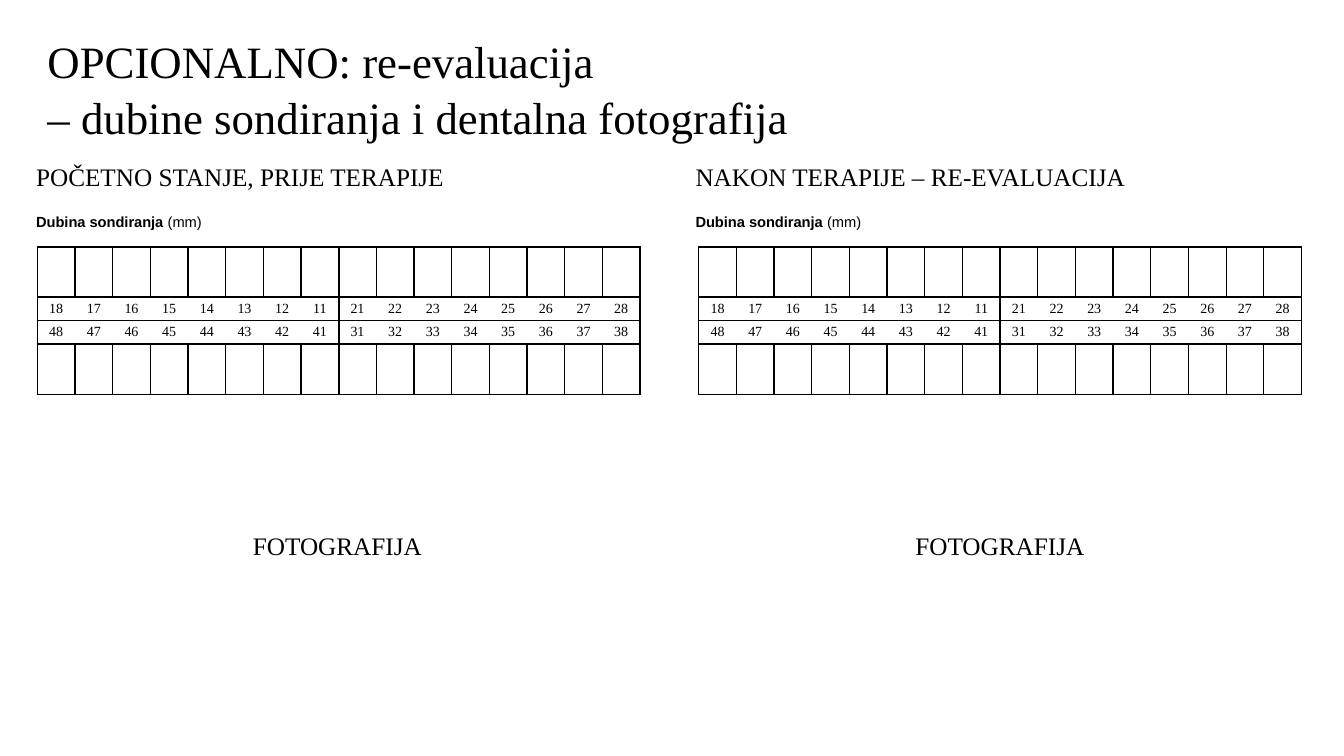
"""Build a slide comparing probing depths before therapy and at re-evaluation."""
from dataclasses import dataclass

import lxml.etree
import pptx
import pptx.dml.color
import pptx.enum.text
import pptx.oxml.ns
import pptx.slide
import pptx.table
import pptx.text.text
import pptx.util

PX = 9144


@dataclass(frozen=True)
class Theme:
    """Colours, fonts, type sizes and line widths."""

    ink: str = "000000"
    serif: str = "Times New Roman"
    sans: str = "Arial"
    title: float = 32
    heading: float = 18
    depth: float = 10.5
    tooth: float = 10
    thin: float = 1
    thick: float = 1.5


@dataclass(frozen=True)
class Caption:
    """A piece of text, optionally led by a bold part, and its place in px."""

    text: str
    left: int
    top: int
    width: int
    height: int
    size: float
    font: str
    bold_lead: str = ""
    wrap: bool = False


@dataclass(frozen=True)
class Stage:
    """One examination: heading, probing chart and photo area."""

    heading: str
    heading_width: int
    text_left: int
    chart_left: int
    photo_left: int


THEME = Theme()
STAGES = (
    Stage("POČETNO STANJE, PRIJE TERAPIJE", 429, 26, 37, 241),
    Stage("NAKON TERAPIJE – RE-EVALUACIJA", 451, 680, 693, 898),
)
UPPER_TEETH = (*range(18, 10, -1), *range(21, 29))
LOWER_TEETH = (*range(48, 40, -1), *range(31, 39))
CHART_ROWS = ((), UPPER_TEETH, LOWER_TEETH, ())
ROW_HEIGHTS = (50, 23, 23, 50)
ROW_EDGES = (THEME.thin, THEME.thick, THEME.thin, THEME.thick, THEME.thin)
CHART_TOP, CHART_WIDTH = 245, 598
TEETH = len(UPPER_TEETH)


def px(length: int) -> pptx.util.Emu:
    """Turn px into EMU."""
    return pptx.util.Emu(length * PX)


def style_run(run: pptx.text.text._Run, size: float, font: str, bold: bool = False) -> None:
    """Give a run its typeface, size, weight and colour."""
    run.font.name = font
    run.font.size = pptx.util.Pt(size)
    run.font.bold = bold
    run.font.color.rgb = pptx.dml.color.RGBColor.from_string(THEME.ink)


def add_caption(slide: pptx.slide.Slide, caption: Caption) -> None:
    """Place a caption as a text box."""
    box = slide.shapes.add_textbox(
        px(caption.left), px(caption.top), px(caption.width), px(caption.height)
    )
    frame = box.text_frame
    frame.word_wrap = caption.wrap
    fit = pptx.enum.text.MSO_AUTO_SIZE
    frame.auto_size = fit.NONE if caption.wrap else fit.SHAPE_TO_FIT_TEXT
    for wording, bold in ((caption.bold_lead, True), (caption.text, False)):
        if wording:
            run = frame.paragraphs[0].add_run()
            run.text = wording
            style_run(run, caption.size, caption.font, bold)


def set_border(cell: pptx.table._Cell, side: str, width: float) -> None:
    """Draw one side of a cell, or clear it when the width is zero."""
    qn = pptx.oxml.ns.qn
    properties = cell._tc.get_or_add_tcPr()
    border = lxml.etree.SubElement(properties, qn(f"a:ln{side}"), w=str(pptx.util.Pt(width)))
    if width:
        paint = lxml.etree.SubElement(border, qn("a:solidFill"))
        lxml.etree.SubElement(paint, qn("a:srgbClr"), val=THEME.ink)
    else:
        lxml.etree.SubElement(border, qn("a:noFill"))


def column_edge(edge: int, numbered: bool) -> float:
    """Give the width of a vertical line; numbered rows keep only midline and ends."""
    if edge == TEETH // 2:
        return THEME.thick
    return 0 if numbered and 0 < edge < TEETH else THEME.thin


def add_probing_chart(slide: pptx.slide.Slide, left: int) -> None:
    """Draw the dental chart with empty depth cells around the tooth numbers."""
    chart = slide.shapes.add_table(
        len(CHART_ROWS), TEETH, px(left), px(CHART_TOP), px(CHART_WIDTH), px(sum(ROW_HEIGHTS))
    ).table
    chart.first_row = chart.horz_banding = False
    for column in chart.columns:
        column.width = px(CHART_WIDTH) // TEETH
    for row, teeth in enumerate(CHART_ROWS):
        chart.rows[row].height = px(ROW_HEIGHTS[row])
        for column in range(TEETH):
            cell = chart.cell(row, column)
            set_border(cell, "L", column_edge(column, bool(teeth)))
            set_border(cell, "R", column_edge(column + 1, bool(teeth)))
            set_border(cell, "T", ROW_EDGES[row])
            set_border(cell, "B", ROW_EDGES[row + 1])
            cell.fill.background()
            if teeth:
                cell.margin_left = cell.margin_right = px(7)
                cell.margin_top = cell.margin_bottom = 0
                cell.vertical_anchor = pptx.enum.text.MSO_ANCHOR.MIDDLE
                number = cell.text_frame.paragraphs[0]
                number.text = str(teeth[column])
                number.alignment = pptx.enum.text.PP_ALIGN.CENTER
                style_run(number.runs[0], THEME.tooth, THEME.serif)


def set_title(slide: pptx.slide.Slide) -> None:
    """Fill and format the title placeholder."""
    title = slide.shapes.title
    title.left, title.top, title.width, title.height = px(37), px(24), px(1200), px(125)
    frame = title.text_frame
    frame.auto_size = pptx.enum.text.MSO_AUTO_SIZE.NONE
    frame.vertical_anchor = pptx.enum.text.MSO_ANCHOR.MIDDLE
    heading = frame.paragraphs[0]
    heading.text = "OPCIONALNO: re-evaluacija\v– dubine sondiranja i dentalna fotografija"
    heading.alignment = pptx.enum.text.PP_ALIGN.LEFT
    heading.line_spacing = 1.05
    for run in heading.runs:
        style_run(run, THEME.title, THEME.serif)


def add_stage(slide: pptx.slide.Slide, stage: Stage) -> None:
    """Draw one half of the slide."""
    captions = (
        Caption(stage.heading, stage.text_left, 155, stage.heading_width, 40,
                THEME.heading, THEME.serif),
        Caption(" (mm)", stage.text_left, 206, 612, 51, THEME.depth, THEME.sans,
                bold_lead="Dubina sondiranja", wrap=True),
        Caption("FOTOGRAFIJA", stage.photo_left, 521, 189, 40, THEME.heading, THEME.serif),
    )
    for caption in captions:
        add_caption(slide, caption)
    add_probing_chart(slide, stage.chart_left)


def main() -> None:
    """Build and save the presentation."""
    deck = pptx.Presentation()
    deck.slide_width, deck.slide_height = px(1333), px(750)
    slide = deck.slides.add_slide(deck.slide_layouts.get_by_name("Title Only"))
    set_title(slide)
    for stage in STAGES:
        add_stage(slide, stage)
    deck.save("out.pptx")


if __name__ == "__main__":
    main()
